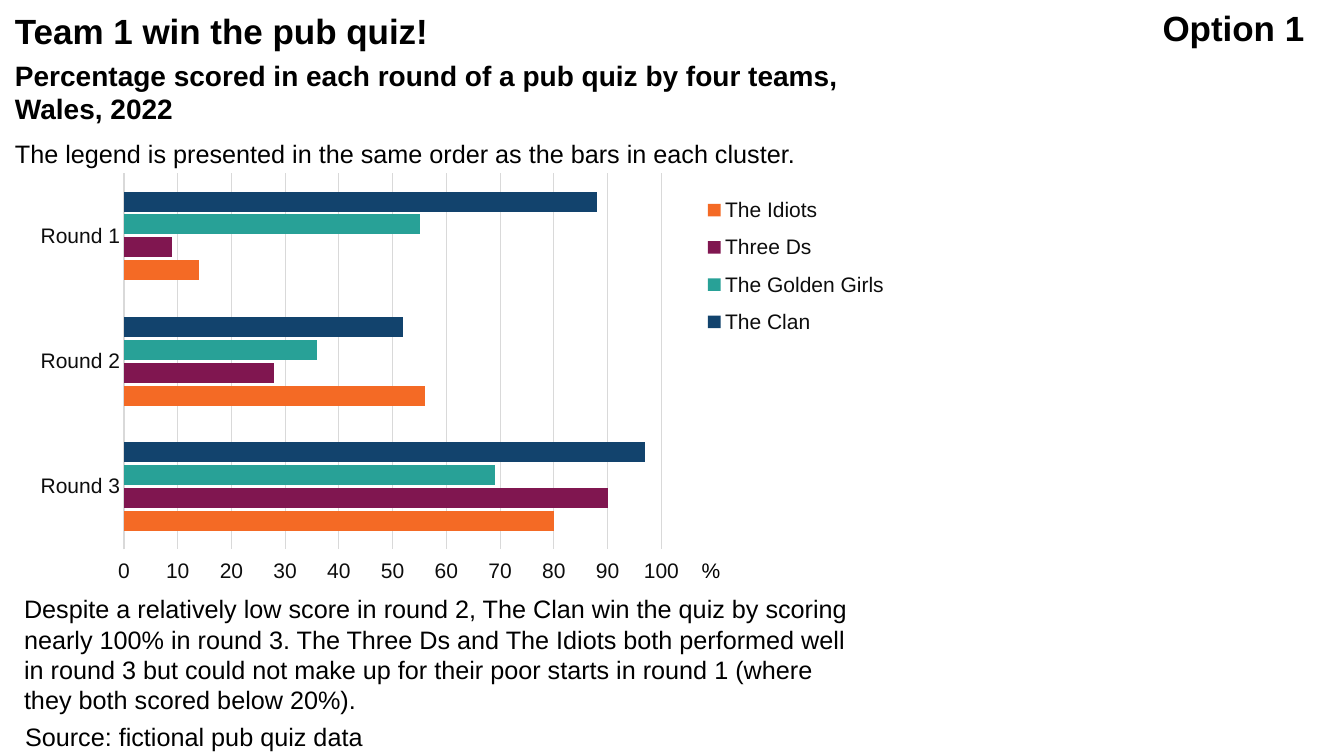
from dataclasses import dataclass

import pptx
import pptx.chart.data
import pptx.dml.color
import pptx.enum.chart
import pptx.enum.text
import pptx.oxml
import pptx.oxml.ns
import pptx.util

Inches = pptx.util.Inches
Pt = pptx.util.Pt
FONT = "Arial"
BLACK = "000000"
INK = "0D0D0D"
GREY = "D9D9D9"
WIDE, HIGH = 8.65, 4.24


@dataclass
class Note:
    text: str
    left: float
    top: float
    width: float
    height: float
    size: int = 18
    bold: bool = False
    wrap: bool = True


@dataclass
class Team:
    name: str
    color: str
    scores: tuple[int, ...]


TITLE = Note("Option 1", 11.43, 0.01, 1.63, 0.86, 25, True, False)
HEADS = [
    Note("Team 1 win the pub quiz!", 0.05, 0.05, 4.35, 0.86, 25, True, False),
    Note("Percentage scored in each round of a pub quiz by four teams, Wales, 2022",
         0.05, 0.53, 8.6, 0.77, 20, True),
    Note("The legend is presented in the same order as the bars in each cluster.",
         0.05, 1.32, 11.01, 0.4),
]
FEET = [
    Note("Despite a relatively low score in round 2, The Clan win the quiz by scoring "
         "nearly 100% in round 3. The Three Ds and The Idiots both performed well in "
         "round 3 but could not make up for their poor starts in round 1 (where they "
         "both scored below 20%).", 0.14, 5.84, 8.5, 1.31),
    Note("Source: fictional pub quiz data", 0.15, 7.11, 3.77, 0.4),
    Note("%", 6.86, 5.48, 0.39, 0.35, 15, wrap=False),
]
ROUNDS = ["Round 1", "Round 2", "Round 3"]
TEAMS = [
    Team("The Clan", "12436D", (88, 52, 97)),
    Team("The Golden Girls", "28A197", (55, 36, 69)),
    Team("Three Ds", "801650", (9, 28, 90)),
    Team("The Idiots", "F46A25", (14, 56, 80)),
]


def tint(color, code: str) -> None:
    color.rgb = pptx.dml.color.RGBColor.from_string(code)


def style(font, size: int, code: str, bold: bool = False) -> None:
    font.name = FONT
    font.size = Pt(size)
    font.bold = bold
    tint(font.color, code)


def write(shape, note: Note) -> None:
    shape.left, shape.top = Inches(note.left), Inches(note.top)
    shape.width, shape.height = Inches(note.width), Inches(note.height)
    frame = shape.text_frame
    frame.text = note.text
    frame.word_wrap = note.wrap
    frame.auto_size = pptx.enum.text.MSO_AUTO_SIZE.SHAPE_TO_FIT_TEXT
    frame.vertical_anchor = pptx.enum.text.MSO_ANCHOR.TOP
    line = frame.paragraphs[0]
    line.alignment = pptx.enum.text.PP_ALIGN.LEFT
    style(line.font, note.size, BLACK, note.bold)


def add_notes(slide, notes: list[Note]) -> None:
    for note in notes:
        write(slide.shapes.add_textbox(0, 0, 0, 0), note)


def place(part, x: float, y: float, w: float, h: float, inner: bool = False) -> None:
    for old in part.findall(pptx.oxml.ns.qn("c:layout")):
        part.remove(old)
    target = '<c:layoutTarget val="inner"/>' if inner else ""
    layout = pptx.oxml.parse_xml(
        f'<c:layout {pptx.oxml.ns.nsdecls("c")}><c:manualLayout>{target}'
        '<c:xMode val="edge"/><c:yMode val="edge"/>'
        f'<c:x val="{x / WIDE}"/><c:y val="{y / HIGH}"/>'
        f'<c:w val="{w / WIDE}"/><c:h val="{h / HIGH}"/>'
        '</c:manualLayout></c:layout>')
    part.insert(0 if inner else 1, layout)


def add_bars(slide) -> None:
    enum = pptx.enum.chart
    data = pptx.chart.data.CategoryChartData()
    data.categories = ROUNDS
    for team in TEAMS:
        data.add_series(team.name, team.scores)
    chart = slide.shapes.add_chart(
        enum.XL_CHART_TYPE.BAR_CLUSTERED, Inches(0.23), Inches(1.63),
        Inches(WIDE), Inches(HIGH), data).chart
    chart.has_title = False
    style(chart.font, 15, INK)

    plot = chart.plots[0]
    plot.gap_width = 182
    plot.overlap = -15
    plot.vary_by_categories = False
    for bar, team in zip(plot.series, TEAMS):
        bar.format.fill.solid()
        tint(bar.format.fill.fore_color, team.color)

    cat, val = chart.category_axis, chart.value_axis
    for axis in (cat, val):
        axis.major_tick_mark = enum.XL_TICK_MARK.NONE
        axis.minor_tick_mark = enum.XL_TICK_MARK.NONE
        style(axis.tick_labels.font, 15, INK)
    cat.reverse_order = True
    val.tick_label_position = enum.XL_TICK_LABEL_POSITION.HIGH
    val.minimum_scale, val.maximum_scale, val.major_unit = 0, 100, 10
    val.has_major_gridlines = True
    val.format.line.fill.background()
    for line in (cat.format.line, val.major_gridlines.format.line):
        tint(line.color, GREY)
        line.width = Pt(0.75)

    chart.has_legend = True
    key = chart.legend
    key.position = enum.XL_LEGEND_POSITION.RIGHT
    key.include_in_layout = False
    style(key.font, 15, INK)
    root = chart.element
    place(root.find(".//" + pptx.oxml.ns.qn("c:plotArea")), 1, 0.09, 5.33, 3.73, True)
    place(root.find(".//" + pptx.oxml.ns.qn("c:legend")), 6.69, 0.2, 1.95, 1.62)


def main() -> None:
    deck = pptx.Presentation()
    deck.slide_width, deck.slide_height = Inches(13.33), Inches(7.5)
    slide = deck.slides.add_slide(deck.slide_layouts.get_by_name("Title Only"))
    write(slide.shapes.title, TITLE)
    add_notes(slide, HEADS)
    add_bars(slide)
    add_notes(slide, FEET)
    deck.save("out.pptx")


if __name__ == "__main__":
    main()
